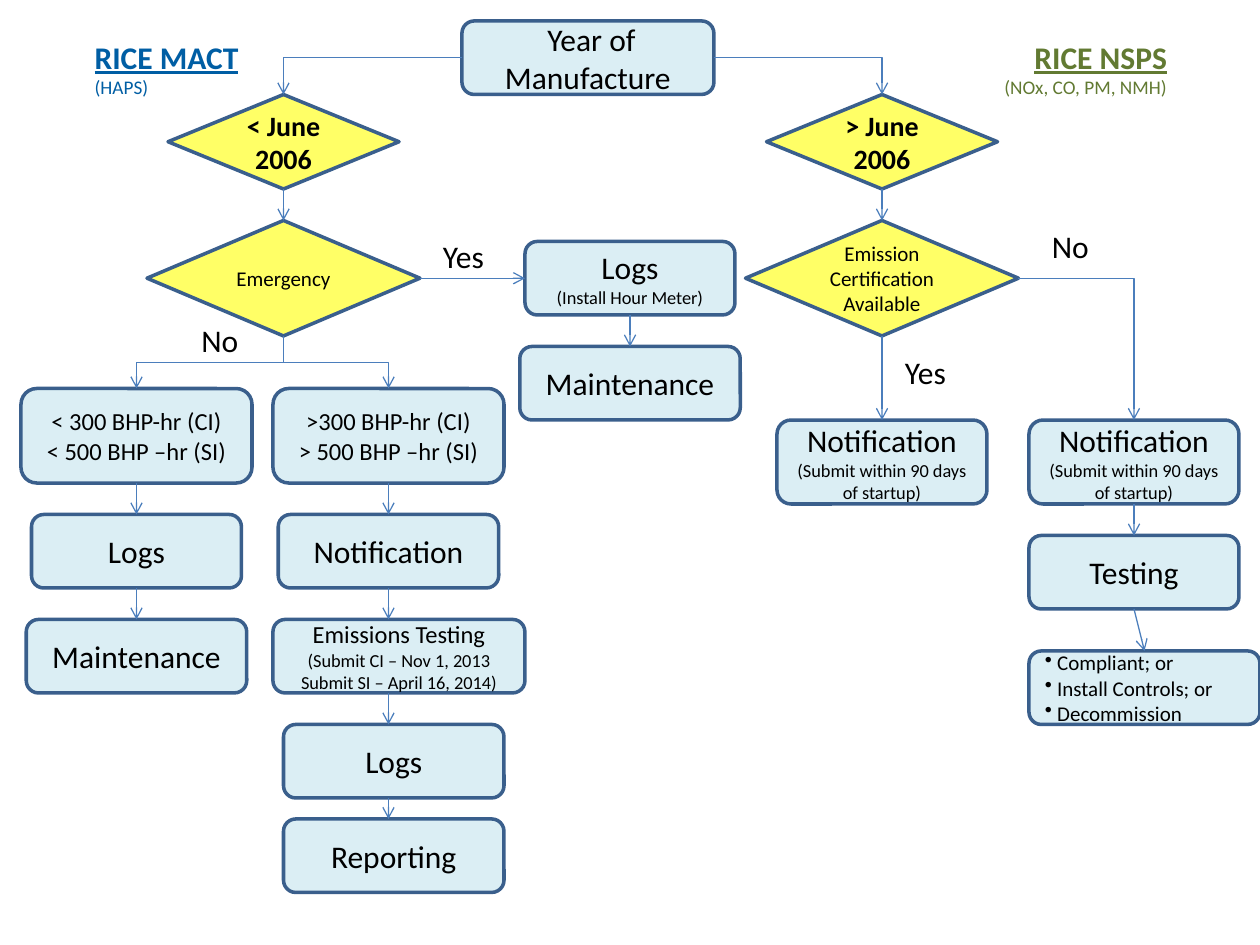
from dataclasses import dataclass

from pptx import Presentation
from pptx.dml.color import RGBColor
from pptx.enum.shapes import MSO_CONNECTOR as Link, MSO_SHAPE as Form
from pptx.enum.text import MSO_ANCHOR as Anchor, MSO_AUTO_SIZE as Fit, PP_ALIGN as Align
from pptx.oxml.ns import qn
from pptx.oxml.xmlchemy import OxmlElement
from pptx.util import Pt


@dataclass(frozen=True)
class Theme:
    font: str = "Calibri"
    ink: str = "000000"
    mact: str = "005EA4"
    nsps: str = "627A32"
    step_fill: str = "DBEEF4"
    choice_fill: str = "FFFF66"
    border: str = "3A5F8C"
    arrow: str = "4B7EBC"
    large: float = 18
    date: float = 16
    medium: float = 14
    small: float = 12
    caption: float = 11
    note: float = 10.5


@dataclass(frozen=True)
class Box:
    left: float
    top: float
    width: float
    height: float

    def inner(self, center, top, width, height):
        """Box inside this one, placed by its centre line and top."""
        return Box(self.left + center - width / 2, self.top + top, width, height)

    def points(self):
        return [Pt(n) for n in (self.left, self.top, self.width, self.height)]


THEME = Theme()
TOP, LEFT, BOTTOM, RIGHT = range(4)
SUBMIT = [("Notification", THEME.large),
          ("(Submit within 90 days of startup)", THEME.note)]


def write(shape, text, size=THEME.large, color=THEME.ink, bold=False,
          underline=False, align=Align.CENTER, bullet=False):
    """Add one paragraph to a shape."""
    frame = shape.text_frame
    para = frame.add_paragraph() if frame.text else frame.paragraphs[0]
    para.alignment = align
    span = para.add_run()
    span.text = text
    span.font.name = THEME.font
    span.font.size = Pt(size)
    span.font.bold = bold
    span.font.underline = underline
    span.font.color.rgb = RGBColor.from_string(color)
    if bullet:
        props = para._p.get_or_add_pPr()
        props.set("marL", str(Pt(7)))
        props.set("indent", str(-Pt(7)))
        mark = OxmlElement("a:buChar")
        mark.set("char", "•")
        props.append(mark)


def node(page, box, lines, form=Form.ROUNDED_RECTANGLE, fill=THEME.step_fill, **style):
    """Draw a flowchart node from (text, size) lines."""
    shape = page.shapes.add_shape(form, *box.points())
    shape.shadow.inherit = False
    shape.fill.solid()
    shape.fill.fore_color.rgb = RGBColor.from_string(fill)
    shape.line.color.rgb = RGBColor.from_string(THEME.border)
    shape.line.width = Pt(2)
    shape.text_frame.word_wrap = True
    shape.text_frame.vertical_anchor = Anchor.MIDDLE
    for text, size in lines:
        write(shape, text, size=size, **style)
    return shape


def step(page, box, text):
    return node(page, box, [(text, THEME.large)])


def choice(page, box, text, size, **style):
    return node(page, box, [(text, size)], Form.DIAMOND, THEME.choice_fill, **style)


def text_box(page, box, wrap=False):
    shape = page.shapes.add_textbox(*box.points())
    shape.text_frame.word_wrap = wrap
    shape.text_frame.auto_size = Fit.SHAPE_TO_FIT_TEXT
    return shape


def label(page, box, text):
    write(text_box(page, box), text, align=Align.LEFT)


def heading(page, box, title, detail, color, align, wrap):
    shape = text_box(page, box, wrap)
    write(shape, title, color=color, bold=True, underline=True, align=align)
    write(shape, detail, size=THEME.caption, color=color, align=align)


def draw_arrow(page, link, begin=(0, 0), end=(0, 0)):
    arrow = page.shapes.add_connector(link, *[Pt(n) for n in (*begin, *end)])
    arrow.line.color.rgb = RGBColor.from_string(THEME.arrow)
    arrow.line.width = Pt(0.75)
    head = OxmlElement("a:tailEnd")
    head.set("type", "arrow")
    arrow.line._get_or_add_ln().append(head)
    arrow._element.spPr.append(OxmlElement("a:effectLst"))
    return arrow


def join(page, start, end, sides=(BOTTOM, TOP), link=Link.STRAIGHT):
    arrow = draw_arrow(page, link)
    arrow.begin_connect(start, sides[0])
    arrow.end_connect(end, sides[1])
    return arrow


def join_corner(page, start, end, side):
    """Leave sideways and turn once, down into the top of the end node."""
    arrow = join(page, start, end, (side, TOP), Link.ELBOW)
    arrow._element.spPr.find(qn("a:prstGeom")).set("prst", "bentConnector2")


def join_fork(page, start, end):
    """Leave downwards, cross over halfway, and go down again."""
    arrow = join(page, start, end, link=Link.ELBOW)
    across, down = arrow.end_x - arrow.begin_x, arrow.end_y - arrow.begin_y
    middle_x = (arrow.begin_x + arrow.end_x) // 2
    middle_y = (arrow.begin_y + arrow.end_y) // 2
    arrow.width, arrow.height = down, abs(across)
    arrow.left, arrow.top = middle_x - down // 2, middle_y - abs(across) // 2
    frame = arrow._element.spPr.find(qn("a:xfrm"))
    frame.set("rot", str((270 if across > 0 else 90) * 60000))
    frame.set("flipH", "1" if across > 0 else "0")


def mact_branch(page, box):
    """Draw the older-engine branch and return its entry node."""
    entry = choice(page, box.inner(150, 0, 132, 54), "< June 2006", THEME.date, bold=True)
    emergency = choice(page, box.inner(150, 72, 156, 66), "Emergency", THEME.small)
    meter = node(page, box.inner(348, 84, 120, 42),
                 [("Logs", THEME.large), ("(Install Hour Meter)", THEME.note)])
    upkeep = step(page, box.inner(348, 144, 126, 42), "Maintenance")
    low, high = [
        node(page, box.inner(center, 168, 132, 54), [(line, THEME.medium) for line in lines])
        for center, lines in ((66, ("< 300 BHP-hr (CI)", "< 500 BHP –hr (SI)")),
                              (210, (">300 BHP-hr (CI)", "> 500 BHP –hr (SI)")))]
    logs = step(page, box.inner(66, 240, 120, 42), "Logs")
    low_upkeep = step(page, box.inner(66, 300, 126, 42), "Maintenance")
    notice = step(page, box.inner(210, 240, 126, 42), "Notification")
    node(page, box.inner(216, 300, 144, 42),
         [("Emissions Testing", THEME.medium),
          ("(Submit CI – Nov 1, 2013 Submit SI – April 16, 2014)", THEME.note)])
    step(page, box.inner(213, 360, 126, 42), "Logs")
    step(page, box.inner(213, 414, 126, 42), "Reporting")

    join(page, emergency, meter, (RIGHT, LEFT))
    for start, end in ((entry, emergency), (meter, upkeep), (low, logs),
                       (logs, low_upkeep), (high, notice)):
        join(page, start, end)
    for end in (low, high):
        join_fork(page, emergency, end)
    # These nodes sit off the column's centre line, so the arrows follow the line.
    x = box.left + 210
    for start, end in ((282, 300), (342, 360), (402, 414)):
        draw_arrow(page, Link.STRAIGHT, (x, box.top + start), (x, box.top + end))
    label(page, box.inner(253, 78, 38, 29), "Yes")
    label(page, box.inner(114, 126, 36, 29), "No")
    return entry


def nsps_branch(page, box):
    """Draw the newer-engine branch and return its entry node."""
    entry = choice(page, box.inner(78, 0, 132, 54), "> June 2006", THEME.date, bold=True)
    certified = choice(page, box.inner(78, 72, 156, 66),
                       "Emission Certification Available", THEME.small)
    yes_notice, no_notice = [node(page, box.inner(center, 186, 120, 48), SUBMIT)
                             for center in (78, 222)]
    testing = step(page, box.inner(222, 252, 120, 42), "Testing")
    outcome = node(page, box.inner(228, 318, 132, 42),
                   [(text, THEME.small) for text in
                    ("Compliant; or", "Install Controls; or", "Decommission")],
                   align=Align.LEFT, bullet=True)

    for start, end in ((entry, certified), (certified, yes_notice),
                       (no_notice, testing), (testing, outcome)):
        join(page, start, end)
    join_corner(page, certified, no_notice, RIGHT)
    label(page, box.inner(103, 144, 38, 29), "Yes")
    label(page, box.inner(186, 72, 36, 29), "No")
    return entry


def main():
    deck = Presentation()
    deck.slide_width, deck.slide_height = Pt(720), Pt(540)
    page = deck.slides.add_slide(deck.slide_layouts[6])
    heading(page, Box(47, 18, 97, 44), "RICE MACT", "(HAPS)", THEME.mact, Align.LEFT, True)
    heading(page, Box(565, 18, 109, 44), "RICE NSPS", "(NOx, CO, PM, NMH)",
            THEME.nsps, Align.RIGHT, False)
    root = step(page, Box(264, 12, 144, 42), " Year of Manufacture")
    older = mact_branch(page, Box(12, 54, 411, 456))
    newer = nsps_branch(page, Box(426, 54, 294, 360))
    join_corner(page, root, older, LEFT)
    join_corner(page, root, newer, RIGHT)
    deck.save("out.pptx")


if __name__ == "__main__":
    main()
